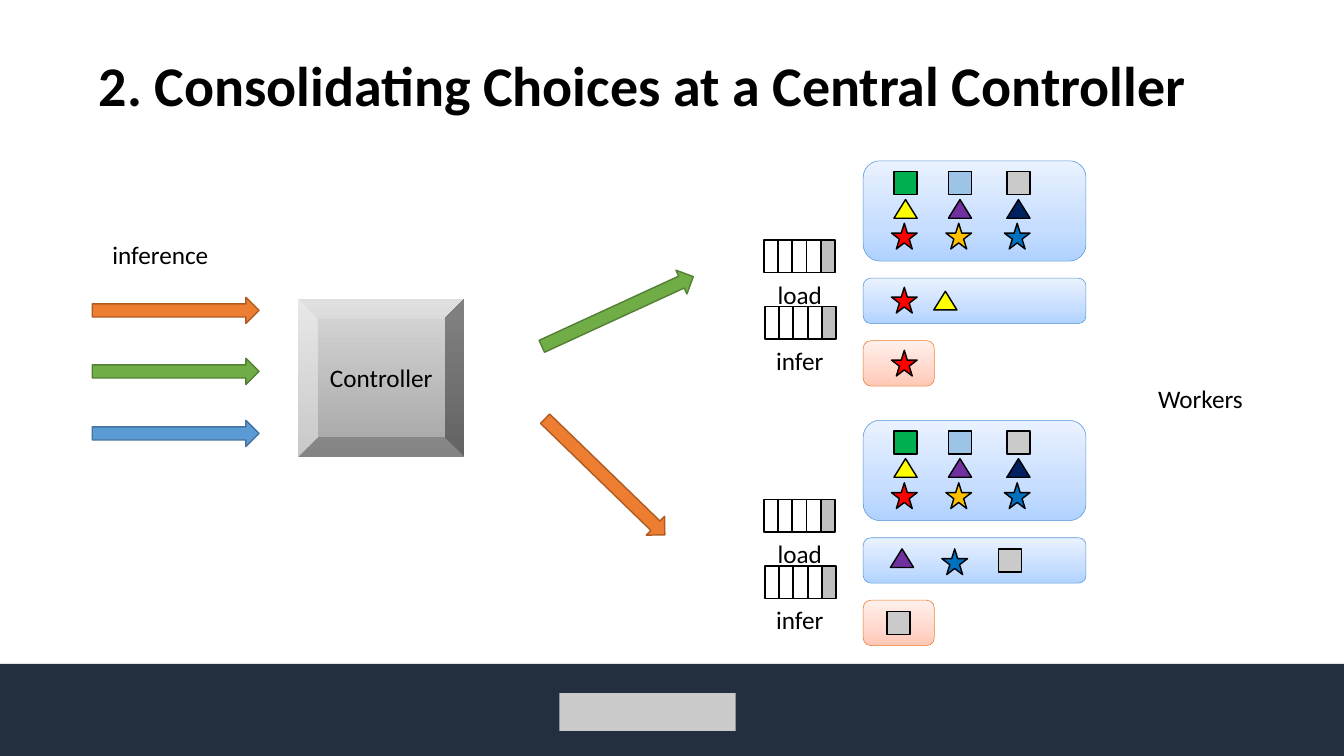
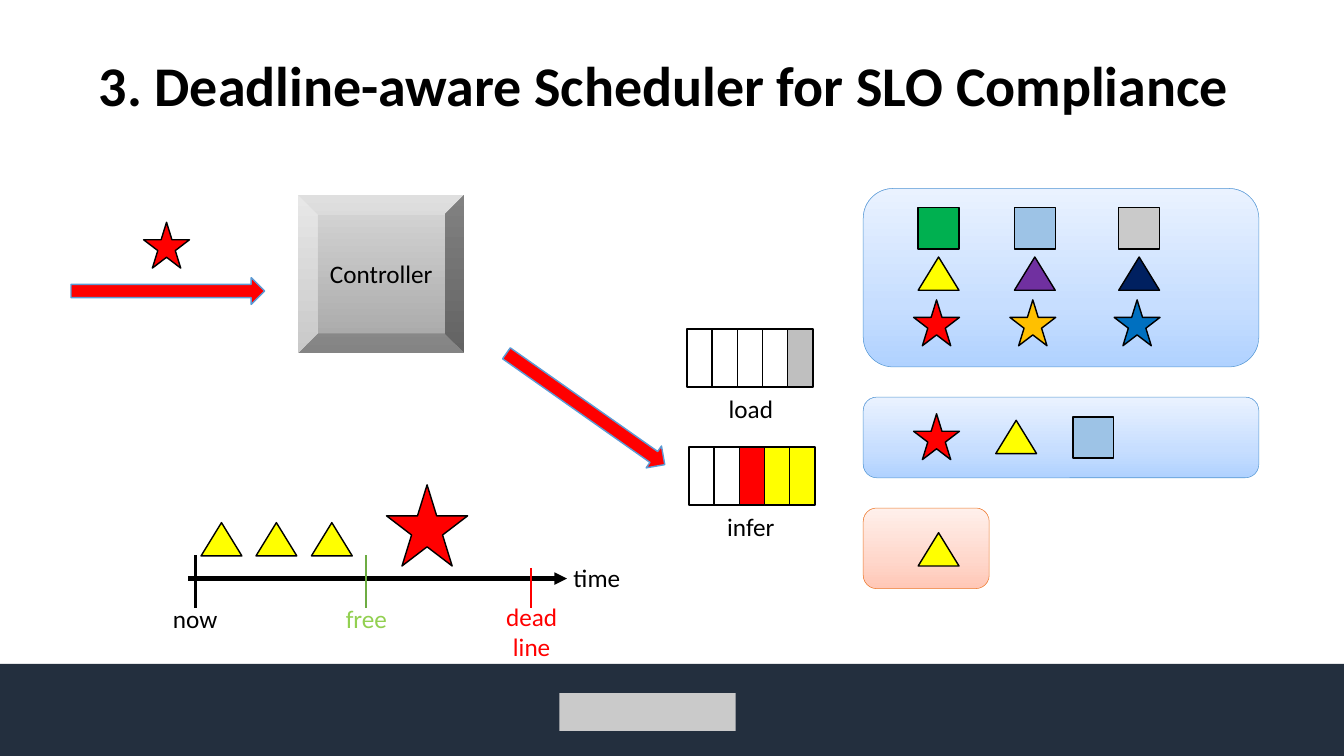
"""Builds two slides on a central controller and its deadline-aware scheduler."""
import copy

import pptx
import pptx.dml.color
import pptx.enum.shapes
import pptx.enum.text
import pptx.oxml.ns
import pptx.util

PX = 9144
WIDE, HIGH = 2667, 1500
RGB = pptx.dml.color.RGBColor
SHAPE = pptx.enum.shapes.MSO_SHAPE
ALIGN = pptx.enum.text.PP_ALIGN

BLACK = RGB(0x00, 0x00, 0x00)
WHITE = RGB(0xFF, 0xFF, 0xFF)
NAVY = RGB(0x23, 0x2F, 0x3E)
RED = RGB(0xFF, 0x00, 0x00)
YELLOW = RGB(0xFF, 0xFF, 0x00)
GOLD = RGB(0xFF, 0xC0, 0x00)
GREEN = RGB(0x00, 0xB0, 0x50)
PURPLE = RGB(0x70, 0x30, 0xA0)
INDIGO = RGB(0x00, 0x20, 0x60)
BLUE = RGB(0x00, 0x70, 0xC0)
SKY = RGB(0x9D, 0xC3, 0xE6)
SILVER = RGB(0xCA, 0xCA, 0xCA)
GRAY = RGB(0xBF, 0xBF, 0xBF)
LIME = RGB(0x92, 0xD0, 0x50)
LEAF = RGB(0x6D, 0xAC, 0x43)
AZURE = RGB(0x5B, 0x9B, 0xD5)
AZURE_EDGE = RGB(0x43, 0x73, 0x9E)
ORANGE = RGB(0xED, 0x7D, 0x31)
ORANGE_EDGE = RGB(0xAF, 0x5C, 0x24)
MOSS = RGB(0x70, 0xAD, 0x47)
MOSS_EDGE = RGB(0x53, 0x80, 0x35)
COOL_EDGE = RGB(0x56, 0x98, 0xD3)
WARM_EDGE = RGB(0xEC, 0x79, 0x2B)
COOL = [(0, RGB(0xB0, 0xD2, 0xFF)), (0.35, RGB(0xC7, 0xDE, 0xFF)), (1, RGB(0xEA, 0xF2, 0xFF))]
WARM = [(0, RGB(0xFF, 0xC7, 0xB6)), (0.35, RGB(0xFF, 0xD7, 0xCB)), (1, RGB(0xFF, 0xF0, 0xEB))]
STEEL = [(0, RGB(0xA5, 0xA5, 0xA5)), (1, RGB(0xD8, 0xD8, 0xD8))]

PIECES = {
    "square": (SHAPE.RECTANGLE, 81, 82),
    "triangle": (SHAPE.ISOSCELES_TRIANGLE, 81, 66),
    "star": (SHAPE.STAR_5_POINT, 91, 91),
}
ROWS = [("square", 0, 38), ("triangle", 0, 136), ("star", -9, 221)]
COLUMNS = [
    (109, (GREEN, YELLOW, RED)),
    (300, (SKY, PURPLE, GOLD)),
    (507, (SILVER, INDIGO, BLUE)),
]
IDLE = [WHITE] * 4 + [GRAY]


class Deck:
    """Holds the deck style and draws on the current slide."""

    face = "Calibri"
    size = 36

    def __init__(self):
        self.show = pptx.Presentation()
        self.show.slide_width = WIDE * PX
        self.show.slide_height = HIGH * PX
        self.slide = None

    def page(self, title):
        """Adds a slide with its footer band and title."""
        self.slide = self.show.slides.add_slide(self.show.slide_layouts[6])
        self.shape(SHAPE.RECTANGLE, 0, 1317, WIDE, 183, NAVY)
        self.shape(SHAPE.RECTANGLE, 1110, 1375, 350, 75, SILVER)
        frame = self.text(title, 183, 30, 2300, 290, size=80, bold=True)
        frame.auto_size = pptx.enum.text.MSO_AUTO_SIZE.NONE
        frame.vertical_anchor = pptx.enum.text.MSO_ANCHOR.MIDDLE
        frame.paragraphs[0].line_spacing = 0.9

    def area(self, *sides):
        """Turns px lengths into EMU."""
        return [round(side) * PX for side in sides]

    def shape(self, kind, x, y, w, h, fill, edge=None, weight=2.0, turn=0):
        """Adds a preset shape with a plain or gradient fill."""
        item = self.slide.shapes.add_shape(kind, *self.area(x, y, w, h))
        item.shadow.inherit = False
        item.rotation = turn
        if isinstance(fill, list):
            self.blend(item, fill)
        else:
            item.fill.solid()
            item.fill.fore_color.rgb = fill
        if edge is None:
            item.line.fill.background()
        else:
            item.line.color.rgb = edge
            item.line.width = pptx.util.Pt(weight)

    def blend(self, item, stops):
        """Fills a shape with a gradient that runs upward."""
        item.fill.gradient()
        item.fill.gradient_angle = 90
        marks = item.element.spPr.find(".//" + pptx.oxml.ns.qn("a:gsLst"))
        while len(marks) < len(stops):
            marks.append(copy.deepcopy(marks[0]))
        for stop, (place, color) in zip(item.fill.gradient_stops, stops):
            stop.position = place
            stop.color.rgb = color

    def text(self, words, x, y, w, h=88, color=BLACK, align=ALIGN.LEFT,
             size=size, bold=False, wrap=True):
        """Adds a text box and returns its frame."""
        frame = self.slide.shapes.add_textbox(*self.area(x, y, w, h)).text_frame
        frame.text = words
        frame.word_wrap = wrap
        frame.auto_size = pptx.enum.text.MSO_AUTO_SIZE.SHAPE_TO_FIT_TEXT
        frame.margin_left = frame.margin_right = 13 * PX
        frame.margin_top = frame.margin_bottom = 13 * PX
        for para in frame.paragraphs:
            para.alignment = align
            para.font.name = self.face
            para.font.size = pptx.util.Pt(size)
            para.font.bold = bold
            para.font.color.rgb = color
        return frame

    def line(self, x1, y1, x2, y2, color, weight=3, tip=False):
        """Adds a straight line, with an arrowhead at its end if asked."""
        item = self.slide.shapes.add_connector(
            pptx.enum.shapes.MSO_CONNECTOR.STRAIGHT, *self.area(x1, y1, x2, y2))
        item.line.color.rgb = color
        item.line.width = pptx.util.Pt(weight)
        props = item.element.spPr
        if tip:
            stroke = props.find(pptx.oxml.ns.qn("a:ln"))
            tail = stroke.makeelement(pptx.oxml.ns.qn("a:tailEnd"), {"type": "triangle"})
            stroke.append(tail)
        props.append(props.makeelement(pptx.oxml.ns.qn("a:effectLst"), {}))

    def arrow(self, x, y, w, h, fill, edge, turn=0):
        """Adds a block arrow."""
        self.shape(SHAPE.RIGHT_ARROW, x, y, w, h, fill, edge, turn=turn)

    def piece(self, kind, fill, x, y, zoom=1.0):
        """Adds a model symbol."""
        form, w, h = PIECES[kind]
        self.shape(form, x, y, w * zoom, h * zoom, fill, BLACK)

    def hub(self, y):
        """Adds the controller block."""
        self.shape(SHAPE.BEVEL, 591, y, 331, 314, STEEL)
        self.text("Controller", 591, y + 113, 331, align=ALIGN.CENTER)

    def queue(self, fills, x, y, zoom):
        """Adds a row of queue cells."""
        for step, fill in enumerate(fills):
            self.shape(SHAPE.RECTANGLE, x + 50 * step * zoom, y, 50 * zoom, 115 * zoom, fill, BLACK)

    def worker(self, top, zoom, held, tasks=IDLE):
        """Adds a worker: three memory tiers, symbols and two queues."""
        left = 1713

        def spot(x, y):
            return left + x * zoom, top + y * zoom

        tiers = [(634, 250, 160, WARM, WARM_EDGE),
                 (0, 785, 354, COOL, COOL_EDGE),
                 (414, 785, 160, COOL, COOL_EDGE)]
        for y, w, h, fill, edge in tiers:
            self.shape(SHAPE.ROUNDED_RECTANGLE, *spot(0, y), w * zoom, h * zoom, fill, edge, 0.75)
        for x, fills in COLUMNS:
            for (kind, shift, y), fill in zip(ROWS, fills):
                self.piece(kind, fill, *spot(x + shift, y), zoom)
        for kind, fill, x, y in held:
            self.piece(kind, fill, *spot(x, y), zoom)
        queues = [("load", IDLE, -350, 279), ("infer", tasks, -346, 513)]
        for name, fills, x, y in queues:
            self.queue(fills, *spot(x, y), zoom)
        for name, fills, x, y in queues:
            self.text(name, *spot(-346, y + 115), 246 * zoom, 88 * zoom, align=ALIGN.CENTER)


def central(deck):
    """Draws the slide on the central controller."""
    deck.page("2. Consolidating Choices at a Central Controller")
    deck.worker(319, 0.5625, [
        ("star", RED, 100, 447), ("triangle", YELLOW, 249, 460), ("star", RED, 100, 668)])
    deck.worker(834, 0.5625, [
        ("triangle", PURPLE, 96, 453), ("star", BLUE, 277, 453),
        ("square", SILVER, 476, 453), ("square", SILVER, 84, 673)])
    deck.hub(593)
    deck.text("Workers", 2285, 747, 315)
    deck.text("inference", 210, 461, 279)
    arrows = [(183, 590, ORANGE, ORANGE_EDGE, 0), (183, 711, MOSS, MOSS_EDGE, 0),
              (183, 834, AZURE, AZURE_EDGE, 0), (1035, 920, ORANGE, ORANGE_EDGE, 44.1),
              (1060, 592, MOSS, MOSS_EDGE, 335.3)]
    for x, y, fill, edge, turn in arrows:
        deck.arrow(x, y, 331, 52, fill, edge, turn)


def timed(deck):
    """Draws the slide on the deadline-aware scheduler."""
    deck.page("3. Deadline-aware Scheduler for SLO Compliance")
    deck.line(374, 1148, 1125, 1148, BLACK, 6, tip=True)
    deck.worker(374, 1, [
        ("star", RED, 100, 447), ("triangle", YELLOW, 263, 460),
        ("square", SKY, 416, 453), ("triangle", YELLOW, 109, 683)],
        [WHITE, WHITE, RED, YELLOW, YELLOW])
    for step in range(3):
        deck.piece("triangle", YELLOW, 399 + 109.5 * step, 1037)
    deck.hub(387)
    for x, y, color in ((388, 1102, BLACK), (727, 1102, LEAF), (1054, 1127, RED)):
        deck.line(x, y, x, 1206, color)
    deck.text("time", 1125, 1102, 129)
    deck.text("now", 330, 1184, 116, wrap=False)
    deck.text("free", 657, 1184, 140, color=LIME, align=ALIGN.CENTER)
    deck.text("dead\nline", 960, 1180, 190, 148, RED, ALIGN.CENTER)
    deck.piece("star", RED, 285, 441)
    deck.piece("star", RED, 767, 962, 1.77)
    deck.arrow(141, 551, 384, 53, RED, AZURE)
    deck.arrow(970, 785, 384, 53, RED, AZURE, 35.1)


def main():
    """Builds and saves the deck."""
    deck = Deck()
    central(deck)
    timed(deck)
    deck.show.save("out.pptx")


if __name__ == "__main__":
    main()
